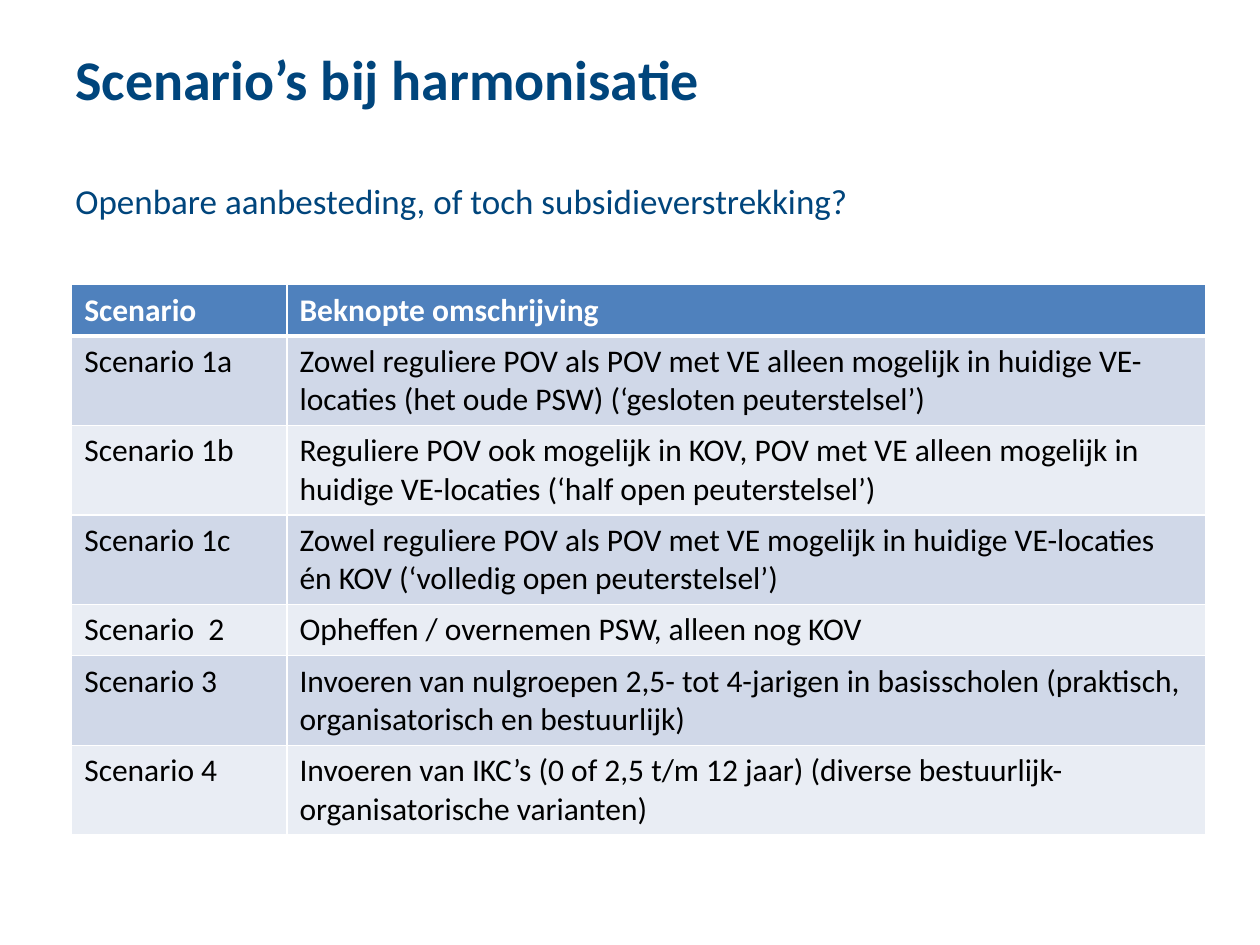
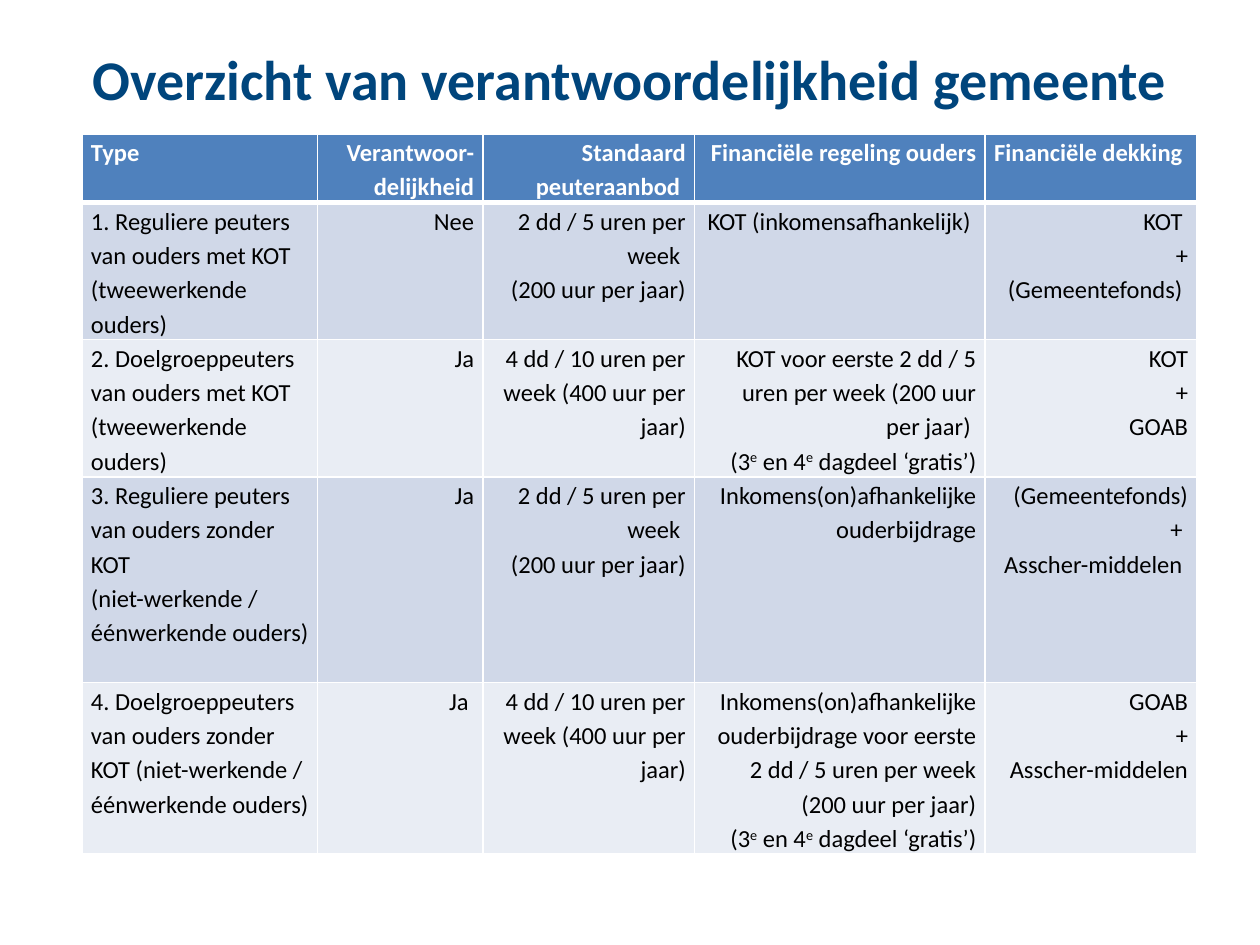
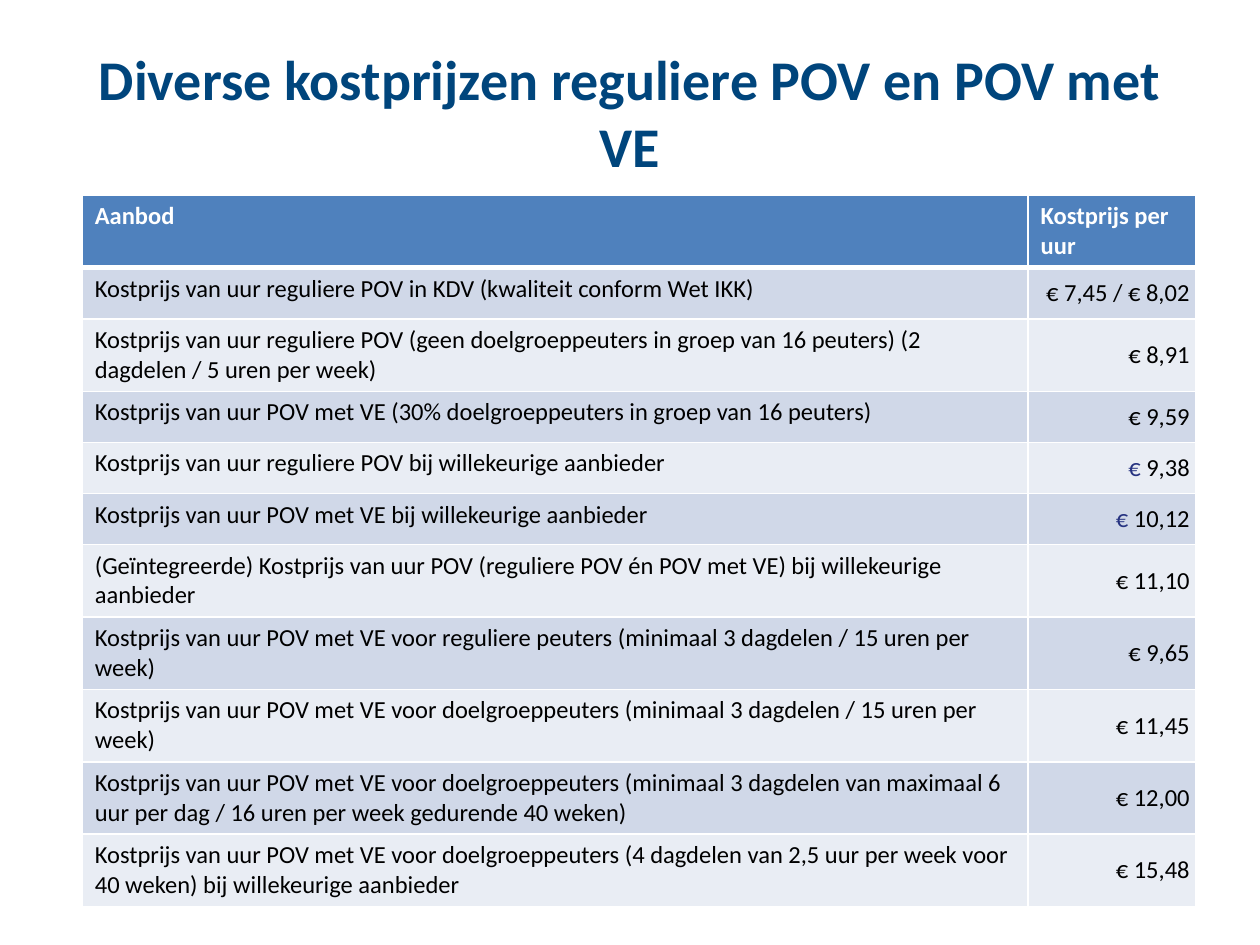
from pptx import Presentation
from pptx.dml.color import RGBColor as RGB
from pptx.enum.text import MSO_ANCHOR as ANCHOR, PP_ALIGN as ALIGN
from pptx.oxml.ns import qn
from pptx.util import Pt
from lxml.etree import SubElement

COLORS = {"title": "00457C", "header": "4F81BD", "odd": "D0D8E8", "even": "E9EDF4",
          "white": "FFFFFF", "black": "000000", "euro": "263381"}
FONT = "Calibri"


def put_text(p, text, size=14, color="black", bold=False, align=ALIGN.LEFT,
             spacing=None, before=None):
    """Fill a paragraph; text is a string or a list of (text, overrides) runs."""
    p.alignment = align
    if spacing:
        p.line_spacing = spacing
    if before:
        p.space_before = Pt(before)
    for part, extra in [(text, {})] if isinstance(text, str) else text:
        r = p.add_run()
        r.text = part
        r.font.name, r.font.size, r.font.bold = FONT, Pt(size), bold
        r.font.color.rgb = RGB.from_string(COLORS[extra.get("color", color)])
        if extra.get("raised"):
            r.font._element.set("baseline", "30000")


class Deck:
    def __init__(self):
        self.prs = Presentation()
        self.prs.slide_width, self.prs.slide_height = Pt(720), Pt(540)
        self.s = None

    def slide(self):
        self.s = self.prs.slides.add_slide(self.prs.slide_layouts[6])

    def title(self, text, align=ALIGN.CENTER, subtitle=None):
        tf = self.s.shapes.add_textbox(Pt(36), Pt(21.6), Pt(648), Pt(90)).text_frame
        tf.word_wrap = True
        put_text(tf.paragraphs[0], text, 32, "title", True, align)
        if subtitle:
            put_text(tf.add_paragraph(), subtitle, 20, "title", align=align, before=39)

    def borders(self, cell, row):
        """White rules; the one under the header is thicker."""
        widths = {"L": 1, "R": 1, "T": 3 if row == 1 else 1, "B": 3 if row == 0 else 1}
        for side, width in widths.items():
            ln = SubElement(cell._tc.get_or_add_tcPr(), qn(f"a:ln{side}"), w=str(Pt(width)))
            fill = SubElement(ln, qn("a:solidFill"))
            SubElement(fill, qn("a:srgbClr"), val=COLORS["white"])

    def table(self, left, top, widths, heights, rows, size=14, spacing=None, cell_style=None):
        """cell_style(row, col) gives (align, side inset, top inset, anchor) or None."""
        tbl = self.s.shapes.add_table(len(rows), len(widths), Pt(left), Pt(top),
                                      Pt(sum(widths)), Pt(sum(heights))).table
        for column, width in zip(tbl.columns, widths):
            column.width = Pt(width)
        for i, (values, height) in enumerate(zip(rows, heights)):
            tbl.rows[i].height = Pt(height)
            band = "header" if i == 0 else "odd" if i % 2 else "even"
            for j, value in enumerate(values):
                cell = tbl.cell(i, j)
                self.borders(cell, i)
                cell.fill.solid()
                cell.fill.fore_color.rgb = RGB.from_string(COLORS[band])
                style = cell_style(i, j) if cell_style else None
                align, side, edge, anchor = style or (ALIGN.LEFT, 7.2, 3.6, ANCHOR.TOP)
                cell.margin_left = cell.margin_right = Pt(side)
                cell.margin_top = cell.margin_bottom = Pt(edge)
                cell.vertical_anchor = anchor
                tf = cell.text_frame
                for n, para in enumerate(value if isinstance(value, tuple) else (value,)):
                    p = tf.add_paragraph() if n else tf.paragraphs[0]
                    put_text(p, para, size, "black" if i else "white", i == 0, align, spacing)


def overview_style(row, col):
    return (ALIGN.RIGHT if col else ALIGN.LEFT), 5, 0, ANCHOR.TOP


def price_style(row, col):
    return (ALIGN.RIGHT, 3.6, 0, ANCHOR.MIDDLE) if row and col else None


def row_heights(lines, line_height, padding=7.2):
    return [n * line_height + padding for n in lines]


def main():
    deck = Deck()

    # Scenarios
    deck.slide()
    deck.title("Scenario’s bij harmonisatie", ALIGN.LEFT,
               "Openbare aanbesteding, of toch subsidieverstrekking?")
    scenarios = [
        ("Scenario", "Beknopte omschrijving"),
        ("Scenario 1a", "Zowel reguliere POV als POV met VE alleen mogelijk in huidige "
                        "VE-locaties (het oude PSW) (‘gesloten peuterstelsel’)"),
        ("Scenario 1b", "Reguliere POV ook mogelijk in KOV, POV met VE alleen mogelijk in "
                        "huidige VE-locaties (‘half open peuterstelsel’)"),
        ("Scenario 1c", "Zowel reguliere POV als POV met VE mogelijk in huidige VE-locaties "
                        "én KOV (‘volledig open peuterstelsel’)"),
        ("Scenario  2", "Opheffen / overnemen PSW, alleen nog KOV"),
        ("Scenario 3", "Invoeren van nulgroepen 2,5- tot 4-jarigen in basisscholen "
                       "(praktisch, organisatorisch en bestuurlijk)"),
        ("Scenario 4", "Invoeren van IKC’s (0 of 2,5 t/m 12 jaar) (diverse "
                       "bestuurlijk-organisatorische varianten)"),
    ]
    deck.table(41, 162.7, [123, 525], row_heights([1, 2, 2, 2, 1, 2, 2], 22),
               scenarios, size=18)

    # Responsibility of the municipality
    deck.slide()
    deck.title("Overzicht van verantwoordelijkheid gemeente")
    raised = {"raised": True}
    free_parts = [("(3", {}), ("e", raised), (" en 4", {}), ("e", raised),
                  (" dagdeel ‘gratis’)", {})]
    two_parts = ("2 dd / 5 uren per week ", "(200 uur per jaar)")
    four_parts = "4 dd / 10 uren per week (400 uur per jaar)"
    overview = [
        ("Type", "Verantwoor-delijkheid", "Standaard peuteraanbod ",
         "Financiële regeling ouders", "Financiële dekking "),
        (("1. Reguliere peuters van ouders met KOT", "(tweewerkende ouders)"), "Nee",
         two_parts, "KOT (inkomensafhankelijk) ", ("KOT ", "+", "(Gemeentefonds) ")),
        (("2. Doelgroeppeuters van ouders met KOT", "(tweewerkende ouders)"), "Ja",
         four_parts,
         ("KOT voor eerste 2 dd / 5 uren per week (200 uur per jaar) ", free_parts),
         ("KOT", "+", "GOAB")),
        (("3. Reguliere peuters van ouders zonder KOT",
          "(niet-werkende / éénwerkende ouders)"), "Ja",
         two_parts, "Inkomens(on)afhankelijke ouderbijdrage",
         ("(Gemeentefonds)", "+ ", "Asscher-middelen ")),
        ("4. Doelgroeppeuters van ouders zonder KOT (niet-werkende / éénwerkende ouders)",
         "Ja ", four_parts,
         ("Inkomens(on)afhankelijke ouderbijdrage voor eerste 2 dd / 5 uren per week "
          "(200 uur per jaar)", free_parts),
         ("GOAB", "+", "Asscher-middelen")),
    ]
    deck.table(47, 76.5, [134.5, 94.5, 121, 166, 121],
               row_heights([2, 4, 4, 6, 5], 19.6, 0), overview,
               spacing=1.15, cell_style=overview_style)

    # Cost prices
    deck.slide()
    deck.title("Diverse kostprijzen reguliere POV en POV met VE")
    euro = ("€ ", {"color": "euro"})
    hour = "Kostprijs van uur "
    target = hour + "POV met VE voor doelgroeppeuters "
    prices = [
        ("Aanbod", "Kostprijs per uur"),
        (hour + "reguliere POV in KDV (kwaliteit conform Wet IKK)", "€ 7,45 / € 8,02"),
        (hour + "reguliere POV (geen doelgroeppeuters in groep van 16 peuters) "
                "(2 dagdelen / 5 uren per week)", "€ 8,91"),
        (hour + "POV met VE (30% doelgroeppeuters in groep van 16 peuters)", "€ 9,59"),
        (hour + "reguliere POV bij willekeurige aanbieder", [euro, ("9,38", {})]),
        (hour + "POV met VE bij willekeurige aanbieder", [euro, ("10,12", {})]),
        ("(Geïntegreerde) " + hour + "POV (reguliere POV én POV met VE) bij willekeurige "
         "aanbieder", "€ 11,10"),
        (hour + "POV met VE voor reguliere peuters (minimaal 3 dagdelen / 15 uren per week)",
         "€ 9,65"),
        (target + "(minimaal 3 dagdelen / 15 uren per week)", "€ 11,45"),
        (target + "(minimaal 3 dagdelen van maximaal 6 uur per dag / 16 uren per week "
                  "gedurende 40 weken)", "€ 12,00"),
        (target + "(4 dagdelen van 2,5 uur per week voor 40 weken) bij willekeurige "
                  "aanbieder", "€ 15,48"),
    ]
    heights = [29.2 if row in (1, 3, 4, 5) else 41.4 for row in range(len(prices))]
    deck.table(47, 111.6, [540.5, 96], heights, prices, cell_style=price_style)

    deck.prs.save("out.pptx")


if __name__ == "__main__":
    main()
